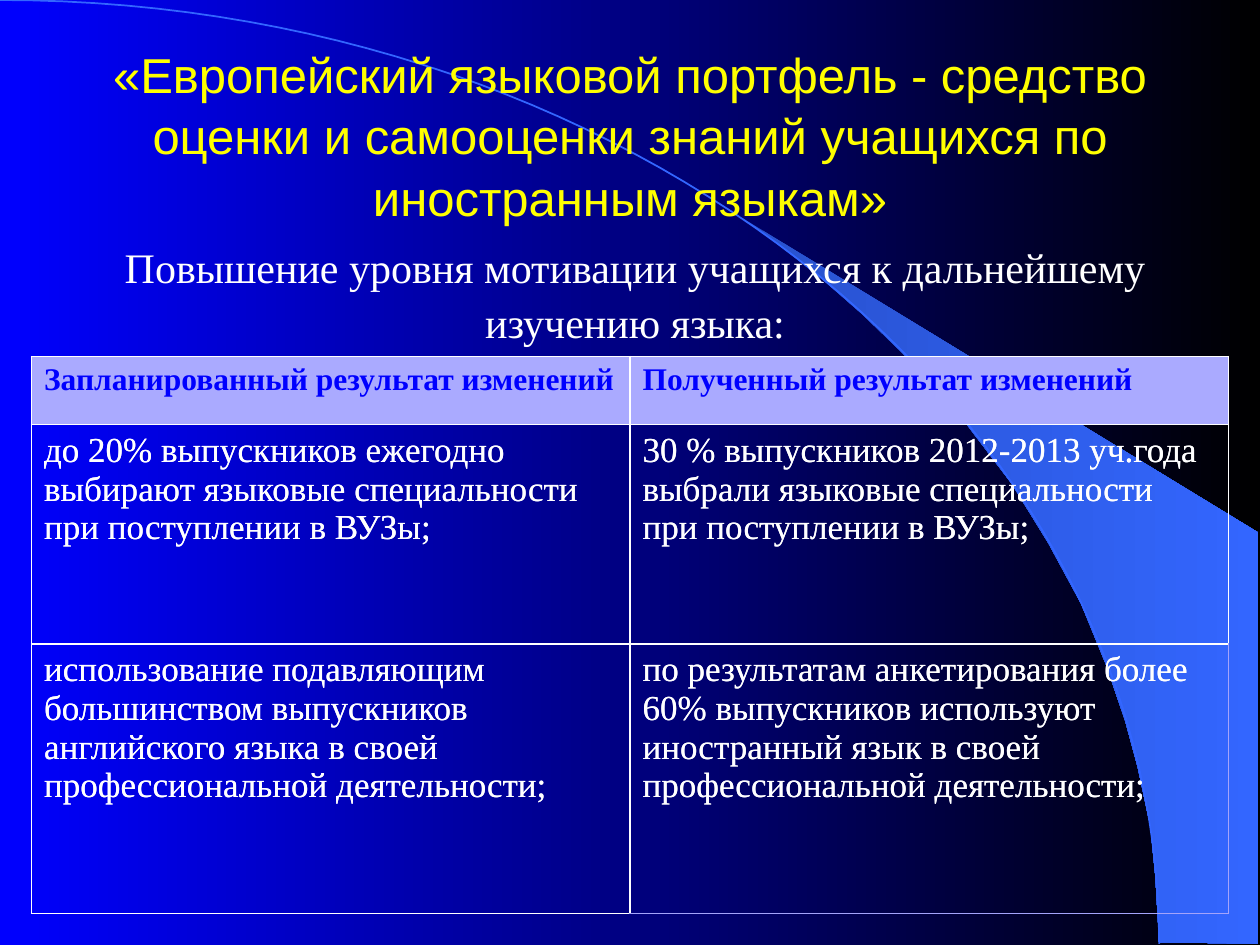
import pptx
import pptx.util
import pptx.dml.color
import pptx.enum.text
import pptx.oxml
import pptx.oxml.ns
from dataclasses import dataclass
from pptx.util import Inches


@dataclass(frozen=True)
class Theme:
    blue: str = "0000FF"
    black: str = "000000"
    white: str = "FFFFFF"
    yellow: str = "FFFF00"
    arc: str = "3366FF"
    arc_dark: str = "2851CC"
    header: str = "AAAAFF"
    pale: str = "A4A4FB"
    title_font: str = "Arial"
    body_font: str = "Times New Roman"
    title_size: int = 28
    subtitle_size: int = 24
    header_size: int = 18
    cell_size: int = 20


THEME = Theme()
CENTER = pptx.enum.text.PP_ALIGN.CENTER
LEFT = pptx.enum.text.PP_ALIGN.LEFT
NO_TABLE_STYLE = "{2D5ABB26-0587-4C30-8999-92F81FD0307C}"


def write_text(frame, text, *, size, color, font=THEME.body_font, bold=False,
               align=LEFT, spacing=1.0):
    frame.word_wrap = True
    paragraph = frame.paragraphs[0]
    paragraph.alignment = align
    paragraph.line_spacing = spacing
    run = paragraph.add_run()
    run.text = text
    run.font.name = font
    run.font.size = pptx.util.Pt(size)
    run.font.bold = bold
    run.font.color.rgb = pptx.dml.color.RGBColor.from_string(color)


def fill_gradient(fill, start, end):
    fill.gradient()
    fill.gradient_angle = 0
    for stop, color in zip(fill.gradient_stops, (start, end)):
        stop.color.rgb = pptx.dml.color.RGBColor.from_string(color)


presentation = pptx.Presentation()
presentation.slide_width = Inches(10)
presentation.slide_height = Inches(7.5)
slide = presentation.slides.add_slide(presentation.slide_layouts[6])
fill_gradient(slide.background.fill, THEME.blue, THEME.black)

# Crescent and the thin arc that continues it
crescent_points = [
    (9.2, 7.48), (9.99, 7.49), (9.99, 4.23), (5.89, 1.73), (6.24, 1.99),
    (6.53, 2.22), (6.85, 2.5), (7.16, 2.8), (7.62, 3.3), (8.03, 3.84),
    (8.32, 4.31), (8.58, 4.79), (8.78, 5.28), (8.93, 5.72), (9.03, 6.09),
    (9.13, 6.56), (9.17, 6.96),
]
arc_controls = [(0, 0), (5.08, 0), (9.2, 3.35), (9.2, 7.49)]
arc_steps = 60
arc_points = []
for step in range(arc_steps + 1):
    t = step / arc_steps
    weights = ((1 - t) ** 3, 3 * t * (1 - t) ** 2, 3 * t ** 2 * (1 - t), t ** 3)
    arc_points.append(tuple(
        sum(weight * point[axis] for weight, point in zip(weights, arc_controls))
        for axis in (0, 1)))

outlines = []
for points, closed in ((crescent_points, True), (arc_points, False)):
    corners = [(Inches(x), Inches(y)) for x, y in points]
    builder = slide.shapes.build_freeform(*corners[0])
    builder.add_line_segments(corners[1:], close=closed)
    shape = builder.convert_to_shape()
    shape.shadow.inherit = False
    outlines.append(shape)
crescent, arc = outlines
fill_gradient(crescent.fill, THEME.arc_dark, THEME.arc)
crescent.line.fill.background()
arc.fill.background()
arc.line.color.rgb = pptx.dml.color.RGBColor.from_string(THEME.arc)
arc.line.width = pptx.util.Pt(1)

# Title, raised above the middle of its box by the bottom margin
title = slide.shapes.add_textbox(Inches(0.75), Inches(0.67), Inches(8.5), Inches(1.25))
title.text_frame.vertical_anchor = pptx.enum.text.MSO_ANCHOR.MIDDLE
title.text_frame.margin_bottom = Inches(0.51)
write_text(title.text_frame,
           "«Европейский языковой портфель - средство оценки и самооценки "
           "знаний учащихся по иностранным языкам»",
           size=THEME.title_size, color=THEME.yellow, font=THEME.title_font,
           align=CENTER, spacing=1.04)

subtitle = slide.shapes.add_textbox(Inches(0.33), Inches(1.83), Inches(9.42), Inches(0.91))
write_text(subtitle.text_frame,
           "Повышение уровня мотивации учащихся к дальнейшему изучению языка:",
           size=THEME.subtitle_size, color=THEME.white, align=CENTER, spacing=1.09)

# Two stacked tables: a pale outer frame under a white grid
rows = [
    ("Запланированный результат изменений", "Полученный результат изменений"),
    ("до 20% выпускников ежегодно выбирают языковые специальности при "
     "поступлении в ВУЗы;",
     "30 % выпускников 2012-2013 уч.года выбрали языковые специальности при "
     "поступлении в ВУЗы;"),
    ("использование подавляющим большинством выпускников английского языка в "
     "своей профессиональной деятельности;",
     "по результатам анкетирования более 60% выпускников используют "
     "иностранный язык в своей профессиональной деятельности;"),
]
row_heights = (0.54, 1.74, 2.14)
last_row, last_column = len(rows) - 1, len(rows[0]) - 1

for has_grid in (False, True):
    graphic_frame = slide.shapes.add_table(
        len(rows), len(rows[0]), Inches(0.25), Inches(2.83),
        Inches(9.5), Inches(sum(row_heights)))
    table = graphic_frame.table
    style = graphic_frame._element.find(".//" + pptx.oxml.ns.qn("a:tableStyleId"))
    style.text = NO_TABLE_STYLE
    for row, height in zip(table.rows, row_heights):
        row.height = Inches(height)

    for row_index, texts in enumerate(rows):
        is_header = row_index == 0
        for column_index, text in enumerate(texts):
            cell = table.cell(row_index, column_index)
            is_corner = (row_index, column_index) == (last_row, last_column)
            outer_sides = {
                "L": column_index == 0, "R": column_index == last_column,
                "T": row_index == 0, "B": row_index == last_row,
            }
            properties = cell._tc.get_or_add_tcPr()
            for side, is_outer in outer_sides.items():
                if not (has_grid or is_outer):
                    continue
                is_white = has_grid and not (is_corner and is_outer)
                color = THEME.white if is_white else THEME.pale
                width = pptx.util.Pt(1 if is_white else 0.75)
                properties.append(pptx.oxml.parse_xml(
                    f'<a:ln{side} {pptx.oxml.ns.nsdecls("a")} w="{width}">'
                    f'<a:solidFill><a:srgbClr val="{color}"/></a:solidFill>'
                    f'</a:ln{side}>'))
            if is_header:
                cell.fill.solid()
                cell.fill.fore_color.rgb = pptx.dml.color.RGBColor.from_string(THEME.header)
            else:
                cell.fill.background()
            write_text(cell.text_frame, text, bold=is_header,
                       size=THEME.header_size if is_header else THEME.cell_size,
                       color=THEME.blue if is_header else THEME.white)

presentation.save("out.pptx")
